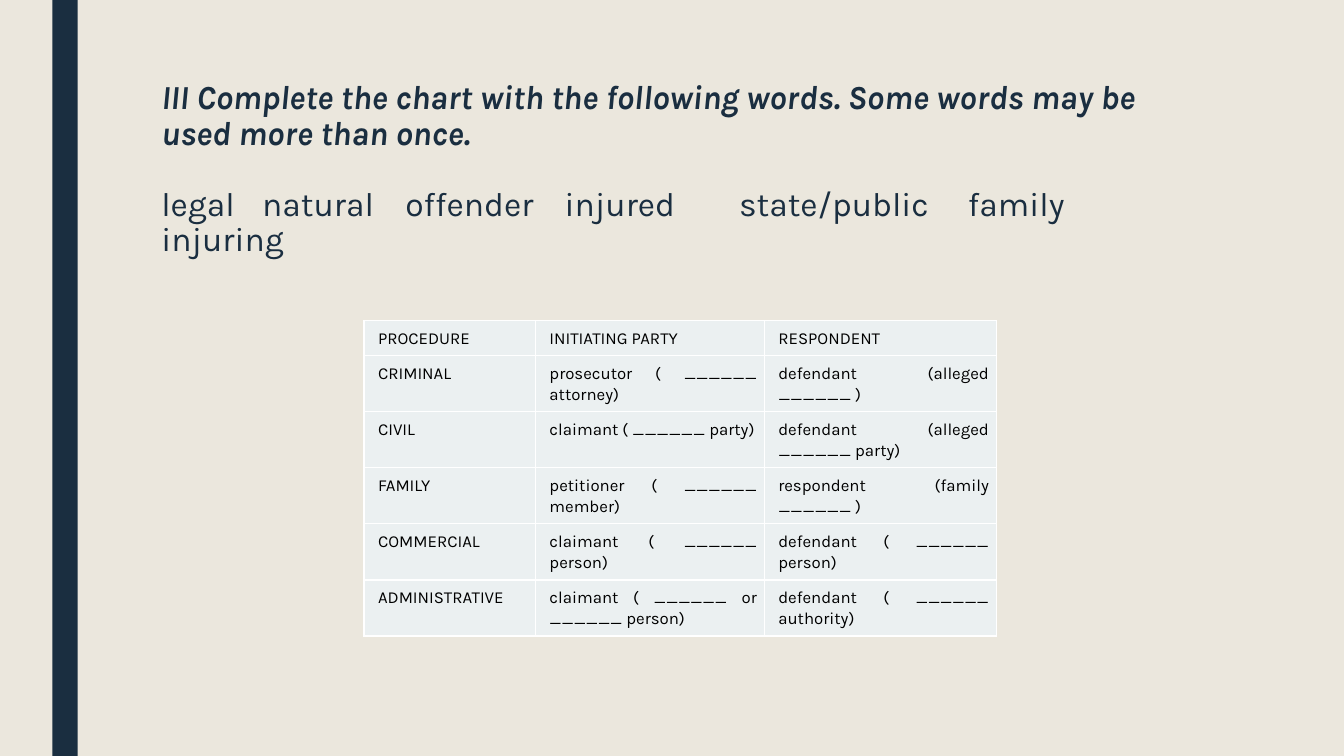
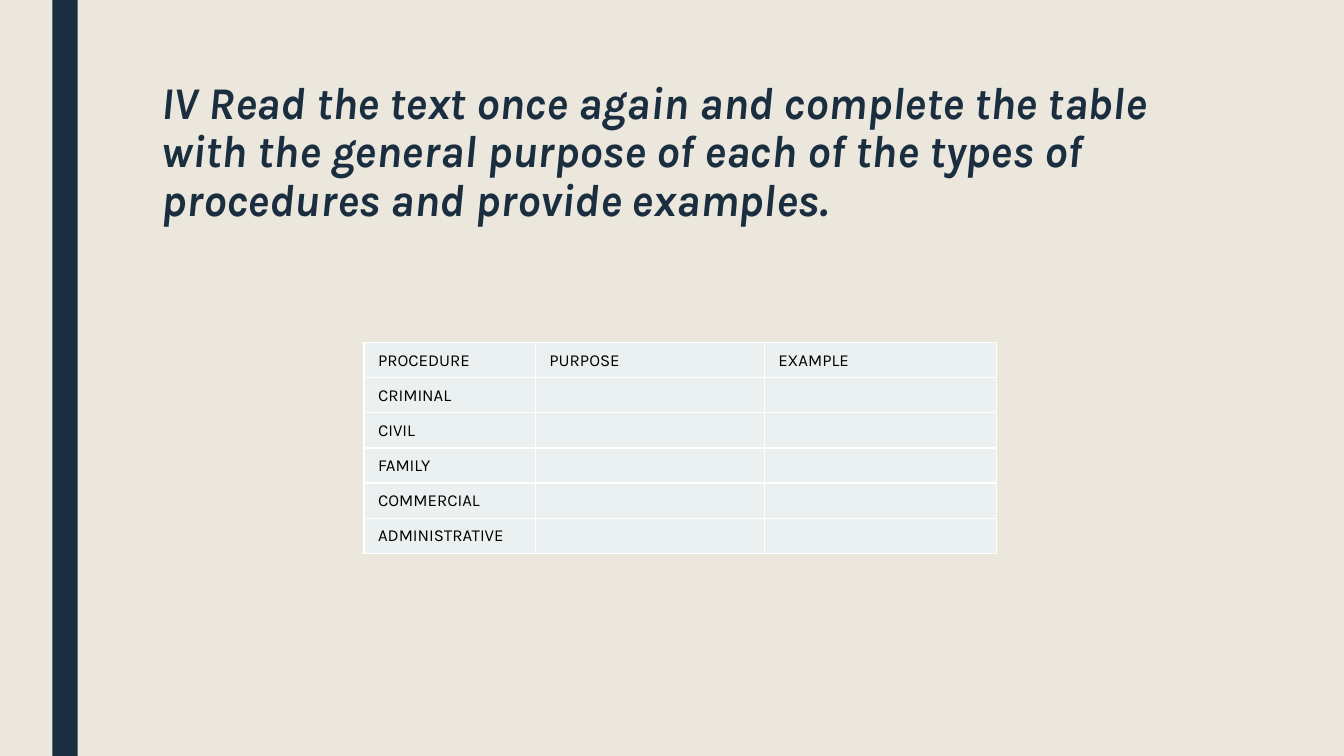
import pptx
import pptx.util
import pptx.dml.color
import pptx.enum.shapes
import pptx.enum.text
import lxml.etree

Inches, Pt = pptx.util.Inches, pptx.util.Pt
qn = pptx.oxml.ns.qn

FONT = "Karla"
COLORS = {"paper": "EBE7DD", "navy": "1A2E40", "cell": "EBF0F1",
          "rule": "FFFFFF", "ink": "000000"}
KINDS = ["CRIMINAL", "CIVIL", "FAMILY", "COMMERCIAL", "ADMINISTRATIVE"]
PARTIES = [
    ("prosecutor ( ______ attorney)", "defendant (alleged ______ )"),
    ("claimant ( ______ party)", "defendant (alleged ______ party)"),
    ("petitioner ( ______ member)", "respondent (family ______ )"),
    ("claimant ( ______ person)", "defendant ( ______ person)"),
    ("claimant ( ______ or ______ person)", "defendant ( ______ authority)"),
]
WORDS = [["legal", "natural", "offender", "injured", "state/public", "family"],
         ["injuring"]]
STOPS = [1, 2.42, 4, 5.73, 8]
SLIDES = [
    {"title": "III Complete the chart with the following words. "
              "Some words may be used more than once.",
     "size": 24, "words": WORDS, "top": 3.18, "tall": 0.55,
     "head": ("PROCEDURE", "INITIATING PARTY", "RESPONDENT"), "body": PARTIES},
    {"title": "IV Read the text once again and complete the table with the "
              "general purpose of each of the types of procedures and "
              "provide examples.",
     "size": 32.4, "words": [], "top": 3.4, "tall": 0.34,
     "head": ("PROCEDURE", "PURPOSE", "EXAMPLE"), "body": [("", "")] * 5},
]
COLS = [1.7, 2.27, 2.3]
LEFT, ROW, PAD = 3.61, 0.34, 0.07


def rgb(name):
    return pptx.dml.color.RGBColor.from_string(COLORS[name])


def paint(fill, name):
    fill.solid()
    fill.fore_color.rgb = rgb(name)


def style(para, size, color, bold=False):
    for run in para.runs:
        font = run.font
        font.name, font.size = FONT, Pt(size)
        font.bold = font.italic = bold
        font.color.rgb = rgb(color)


def add_bar(slide, high):
    bar = slide.shapes.add_shape(pptx.enum.shapes.MSO_SHAPE.RECTANGLE,
                                 Inches(0.52), 0, Inches(0.25), high)
    bar.shadow.inherit = False
    paint(bar.fill, "navy")
    bar.line.fill.background()


def set_tabs(para):
    tabs = lxml.etree.SubElement(para._p.get_or_add_pPr(), qn("a:tabLst"))
    for stop in STOPS:
        lxml.etree.SubElement(tabs, qn("a:tab"), pos=str(Inches(stop)), algn="l")


def add_title(slide, data):
    title = slide.shapes.title
    title.left, title.top = Inches(1.5), Inches(0.75)
    title.width, title.height = Inches(10.5), Inches(1.62)
    frame = title.text_frame
    frame.word_wrap = True
    frame.auto_size = pptx.enum.text.MSO_AUTO_SIZE.NONE
    frame.vertical_anchor = pptx.enum.text.MSO_ANCHOR.TOP
    lines = [data["title"]] + ["\t".join(row) for row in data["words"]]
    frame.text = "\n".join(lines)
    for i, para in enumerate(frame.paragraphs):
        para.alignment = pptx.enum.text.PP_ALIGN.LEFT
        para.line_spacing = 0.89
        para.space_before = Pt(25 if i == 1 else 0)
        style(para, data["size"], "navy", bold=i == 0)
        if len(data["words"]) > i - 1 >= 0 and "\t" in lines[i]:
            set_tabs(para)


def add_rules(props):
    """Draw the four borders of a cell, ahead of its fill."""
    for i, side in enumerate(("lnL", "lnR", "lnT", "lnB")):
        line = lxml.etree.Element(qn("a:" + side), w=str(Pt(1)))
        fill = lxml.etree.SubElement(line, qn("a:solidFill"))
        lxml.etree.SubElement(fill, qn("a:srgbClr"), val=COLORS["rule"])
        props.insert(i, line)


def set_cell(cell, text):
    cell.margin_left = cell.margin_right = Inches(PAD)
    cell.margin_top = cell.margin_bottom = Inches(PAD)
    paint(cell.fill, "cell")
    add_rules(cell._tc.get_or_add_tcPr())
    para = cell.text_frame.paragraphs[0]
    para.alignment = pptx.enum.text.PP_ALIGN.JUSTIFY
    para.line_spacing = 1.07
    para._p.get_or_add_pPr().set("marL", str(Inches(PAD)))
    if text:
        para.text = text
        style(para, 12, "ink")
    else:
        end = lxml.etree.SubElement(para._p, qn("a:endParaRPr"), sz="1200")
        lxml.etree.SubElement(end, qn("a:latin"), typeface=FONT)


def add_grid(slide, data):
    rows = [data["head"]] + [(k, *rest) for k, rest in zip(KINDS, data["body"])]
    highs = [ROW] + [data["tall"]] * len(KINDS)
    table = slide.shapes.add_table(
        len(rows), len(COLS), Inches(LEFT), Inches(data["top"]),
        Inches(sum(COLS)), Inches(sum(highs))).table
    table.first_row = table.horz_banding = False
    for col, wide in zip(table.columns, COLS):
        col.width = Inches(wide)
    for row, high, texts in zip(table.rows, highs, rows):
        row.height = Inches(high)
        for cell, text in zip(row.cells, texts):
            set_cell(cell, text)


def main():
    deck = pptx.Presentation()
    deck.slide_width, deck.slide_height = Inches(13.33), Inches(7.5)
    paint(deck.slide_master.background.fill, "paper")
    for data in SLIDES:
        slide = deck.slides.add_slide(deck.slide_layouts[5])
        add_bar(slide, deck.slide_height)
        add_title(slide, data)
        add_grid(slide, data)
    deck.save("out.pptx")


if __name__ == "__main__":
    main()
